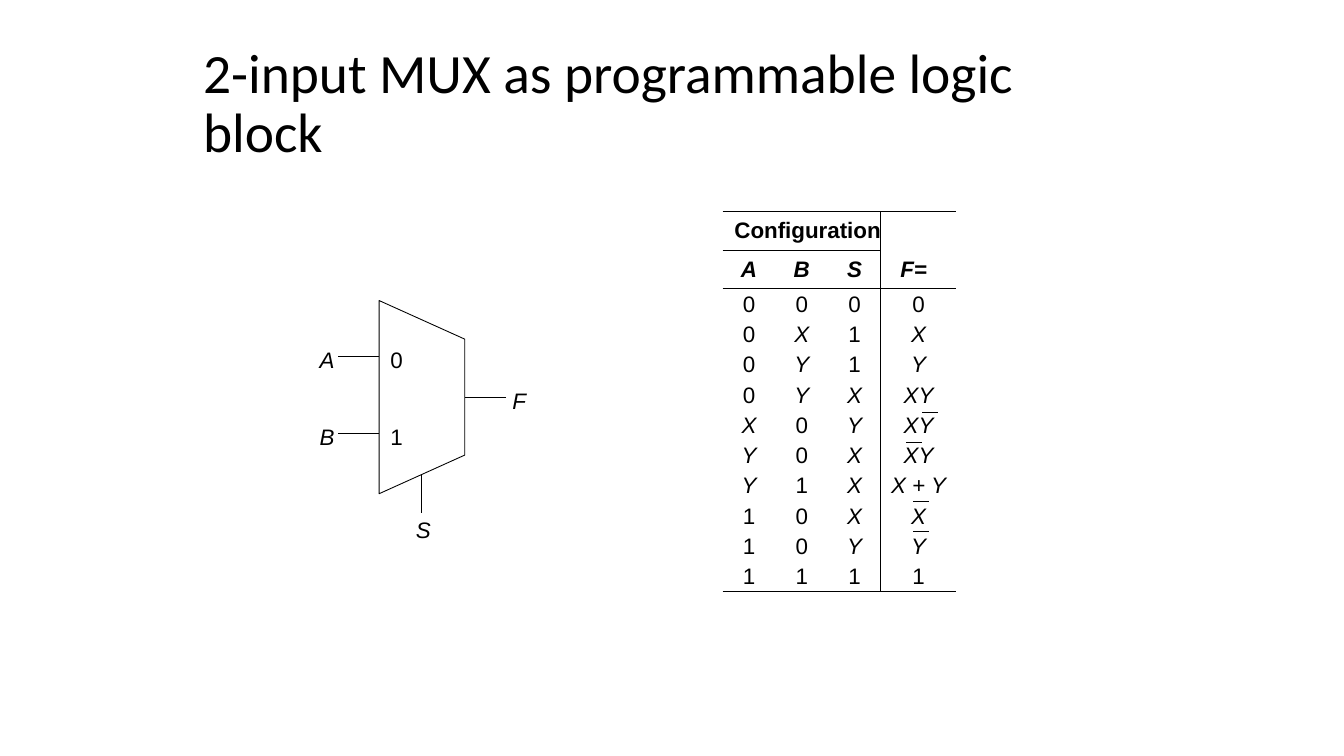
from lxml import etree
from pptx import Presentation
from pptx.dml.color import RGBColor
from pptx.enum.shapes import MSO_CONNECTOR as CONN
from pptx.enum.text import MSO_ANCHOR as ANCHOR, PP_ALIGN as ALIGN
from pptx.oxml.ns import qn
from pptx.util import Pt

BLACK = RGBColor(0, 0, 0)
THIN, THICK = 0.63, 0.88
HEAD_H, ROW_H = 27.6, 21.24
HEADINGS = ["A", "B", "S", "F="]
FUNCTIONS = [
    ["0", "0", "0", "0"],
    ["0", "X", "1", "X"],
    ["0", "Y", "1", "Y"],
    ["0", "Y", "X", "XY"],
    ["X", "0", "Y", "XY"],
    ["Y", "0", "X", "XY"],
    ["Y", "1", "X", "X + Y"],
    ["1", "0", "X", "X"],
    ["1", "0", "Y", "Y"],
    ["1", "1", "1", "1"],
]
NEGATIONS = {4: 2.5, 5: -9, 7: -4, 8: -4}


def write(tf, text, size=16, font="Arial", bold=False, italic=False,
          align=ALIGN.LEFT, spacing=None):
    """Write one formatted paragraph into a text frame."""
    p = tf.paragraphs[0]
    p.alignment = align
    if spacing:
        p.line_spacing = spacing
    r = p.add_run()
    r.text = text
    f = r.font
    f.size, f.name, f.bold, f.italic = Pt(size), font, bold, italic
    f.color.rgb = BLACK


def add_line(s, x1, y1, x2, y2):
    """Draw a thin straight line without a shadow."""
    ln = s.shapes.add_connector(CONN.STRAIGHT, Pt(x1), Pt(y1), Pt(x2), Pt(y2))
    ln.line.color.rgb = BLACK
    ln.line.width = Pt(THIN)
    etree.SubElement(ln._element.spPr, qn("a:effectLst"))


def add_label(s, text, x, y, width=10.8):
    """Place a one-letter label, with variables in italics."""
    tf = s.shapes.add_textbox(Pt(x), Pt(y), Pt(width), Pt(19.4)).text_frame
    tf.margin_left = tf.margin_right = tf.margin_top = tf.margin_bottom = 0
    tf.word_wrap = False
    write(tf, text, italic=text.isalpha())


def add_title(s, x, y, w, h):
    """Place the slide title."""
    tf = s.shapes.add_textbox(Pt(x), Pt(y), Pt(w), Pt(h)).text_frame
    tf.word_wrap = True
    tf.vertical_anchor = ANCHOR.MIDDLE
    write(tf, "2-input MUX as programmable logic block", size=39.6,
          font="Calibri", spacing=0.9)


def add_mux(s, x, y, w, h):
    """Draw the multiplexer body in its box, with wires and labels around it."""
    slant, wire, rise = 0.2 * h, 29.5, 7.5
    fb = s.shapes.build_freeform(Pt(x), Pt(y + h))
    fb.add_line_segments([(Pt(x + w), Pt(y + h - slant)),
                          (Pt(x + w), Pt(y + slant)), (Pt(x), Pt(y))])
    sp = fb.convert_to_shape()
    sp.shadow.inherit = False
    sp.fill.background()
    sp.line.color.rgb = BLACK
    sp.line.width = Pt(THIN)

    for name, digit, share in (("A", "0", 0.29), ("B", "1", 0.69)):
        level = y + share * h
        add_line(s, x, level, x - wire, level)
        add_label(s, name, x - wire - 13, level - rise)
        add_label(s, digit, x + 8, level - rise, 8.6)

    middle, right = y + h / 2, x + w
    add_line(s, right + wire, middle, right, middle)
    add_label(s, "F", right + wire + 4.5, middle - rise)

    center, bottom = x + w / 2, y + h - slant / 2
    add_line(s, center, bottom, center, bottom + 27.5)
    add_label(s, "S", center - 4.3, bottom + 29.5)


def set_borders(cell, widths):
    """Give a cell its left, right, top and bottom borders; zero means none."""
    tc_pr = cell._tc.get_or_add_tcPr()
    for side, width in zip("LRTB", widths):
        ln = etree.SubElement(tc_pr, qn(f"a:ln{side}"), w=str(Pt(width)))
        if width:
            fill = etree.SubElement(ln, qn("a:solidFill"))
            etree.SubElement(fill, qn("a:srgbClr"), val=str(BLACK))
        else:
            etree.SubElement(ln, qn("a:noFill"))


def add_function_table(s, x, y, w, h):
    """Build the configuration table and the bars over negated variables."""
    rows = [["Configuration", "", "", ""], HEADINGS] + FUNCTIONS
    input_w = 37.7
    col_widths = [input_w] * 3 + [w - 3 * input_w]
    table = s.shapes.add_table(len(rows), len(HEADINGS),
                               Pt(x), Pt(y), Pt(w), Pt(h)).table
    table.first_row = table.horz_banding = False
    for col, width in zip(table.columns, col_widths):
        col.width = Pt(width)
    table.cell(0, 0).merge(table.cell(0, 2))

    rules = {0: THICK, 1: THIN, 2: THICK, len(rows): THIN}
    for i, texts in enumerate(rows):
        head = i < 2
        table.rows[i].height = Pt(HEAD_H if head else ROW_H)
        for j, text in enumerate(texts):
            cell = table.cell(i, j)
            right = j + (cell.span_width if cell.is_merge_origin else 1)
            top, bottom = (0 if k == 1 and j == 3 else rules.get(k, 0)
                           for k in (i, i + 1))
            set_borders(cell, [THIN if j == 3 else 0,
                               THIN if right == 3 else 0, top, bottom])
            cell.fill.background()
            cell.margin_left = cell.margin_bottom = 0
            cell.margin_right = Pt(7 if text == "F=" else 0)
            cell.margin_top = Pt(5 if head else 2.4)
            if text:
                write(cell.text_frame, text, bold=head,
                      italic=i > 0 and not text.isdigit(),
                      align=ALIGN.CENTER if i else ALIGN.RIGHT)

    center = x + w - col_widths[-1] / 2
    for row, offset in NEGATIONS.items():
        level = y + 2 * HEAD_H + row * ROW_H + 3.2
        add_line(s, center + offset, level, center + offset + 11, level)


def main():
    """Build and save the slide."""
    prs = Presentation()
    prs.slide_width, prs.slide_height = Pt(960), Pt(540)
    s = prs.slides.add_slide(prs.slide_layouts[6])
    add_title(s, 138, 30, 678, 90)
    add_mux(s, 270.8, 214.7, 61.2, 138)
    add_function_table(s, 516.2, 151.2, 167, 2 * HEAD_H + len(FUNCTIONS) * ROW_H)
    prs.save("out.pptx")


if __name__ == "__main__":
    main()
